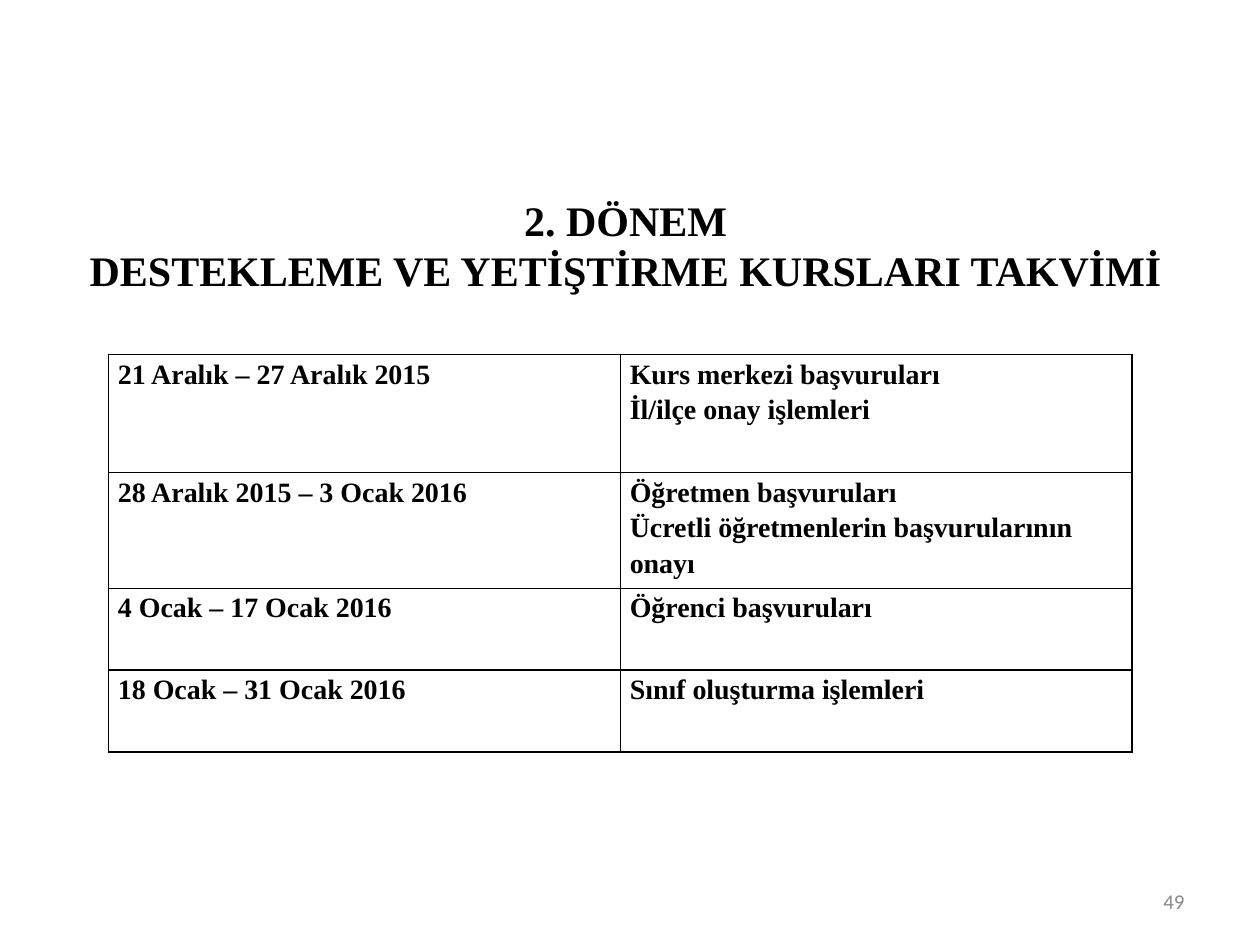
from dataclasses import dataclass

from lxml.etree import SubElement
from pptx import Presentation
from pptx.dml.color import RGBColor
from pptx.enum.text import MSO_ANCHOR, PP_ALIGN
from pptx.oxml.ns import qn
from pptx.util import Pt


@dataclass(frozen=True)
class Theme:
    ink: str = "000000"
    muted: str = "898989"
    serif: str = "Times New Roman"
    sans: str = "Calibri"
    title: int = 24
    body: int = 16
    number: int = 12
    border: int = 1


THEME = Theme()

TITLE = ["2. DÖNEM", "DESTEKLEME VE YETİŞTİRME KURSLARI TAKVİMİ"]
ROW_HEIGHTS = [67.5, 58.5, 46.8, 46.8]
CALENDAR = [
    ("21 Aralık – 27 Aralık 2015",
     ["Kurs merkezi başvuruları", "İl/ilçe onay işlemleri"]),
    ("28 Aralık 2015 – 3 Ocak 2016",
     ["Öğretmen başvuruları", "Ücretli öğretmenlerin başvurularının onayı"]),
    ("4 Ocak – 17 Ocak 2016", ["Öğrenci başvuruları"]),
    ("18 Ocak – 31 Ocak 2016", ["Sınıf oluşturma işlemleri"]),
]


def add_lines(tf, lines, size, font=THEME.serif, color=THEME.ink, bold=True,
              align=PP_ALIGN.LEFT, spacing=1.0):
    """Write each line as a paragraph of one run."""
    tf.word_wrap = True
    for i, line in enumerate(lines):
        p = tf.add_paragraph() if i else tf.paragraphs[0]
        p.alignment = align
        p.line_spacing = spacing
        r = p.add_run()
        r.text = line
        r.font.name = font
        r.font.size = Pt(size)
        r.font.bold = bold
        r.font.color.rgb = RGBColor.from_string(color)


def add_borders(cell):
    tc_pr = cell._tc.get_or_add_tcPr()
    for i, side in enumerate(("lnL", "lnR", "lnT", "lnB")):
        ln = tc_pr.makeelement(qn(f"a:{side}"), {"w": str(Pt(THEME.border))})
        fill = SubElement(ln, qn("a:solidFill"))
        SubElement(fill, qn("a:srgbClr"), val=THEME.ink)
        tc_pr.insert(i, ln)  # borders must precede the cell fill


def add_title(s, left, top, width, height):
    box = s.shapes.add_textbox(Pt(left), Pt(top), Pt(width), Pt(height))
    add_lines(box.text_frame, TITLE, THEME.title, align=PP_ALIGN.CENTER)


def add_calendar(s, left, top, width):
    frame = s.shapes.add_table(len(CALENDAR), 2, Pt(left), Pt(top),
                               Pt(width), Pt(sum(ROW_HEIGHTS)))
    table = frame.table
    table.first_row = table.horz_banding = False
    for col in table.columns:
        col.width = Pt(width / 2)
    for row, height, (dates, tasks) in zip(table.rows, ROW_HEIGHTS, CALENDAR):
        row.height = Pt(height)
        for cell, lines in zip(row.cells, ([dates], tasks)):
            cell.margin_left = cell.margin_right = Pt(5.4)
            cell.margin_top = cell.margin_bottom = Pt(0)
            cell.fill.background()
            add_borders(cell)
            add_lines(cell.text_frame, lines, THEME.body, spacing=1.15)


def add_page_number(s, left, top, width, height):
    box = s.shapes.add_textbox(Pt(left), Pt(top), Pt(width), Pt(height))
    tf = box.text_frame
    tf.vertical_anchor = MSO_ANCHOR.MIDDLE
    add_lines(tf, ["49"], THEME.number, THEME.sans, THEME.muted, bold=False,
              align=PP_ALIGN.RIGHT)


def main():
    prs = Presentation()
    prs.slide_width, prs.slide_height = Pt(720), Pt(540)
    s = prs.slides.add_slide(prs.slide_layouts[6])
    add_page_number(s, 516, 500.5, 168, 28.75)
    add_calendar(s, 62, 202.5, 585)
    add_title(s, 39.5, 107.5, 636, 65)
    prs.save("out.pptx")


if __name__ == "__main__":
    main()
